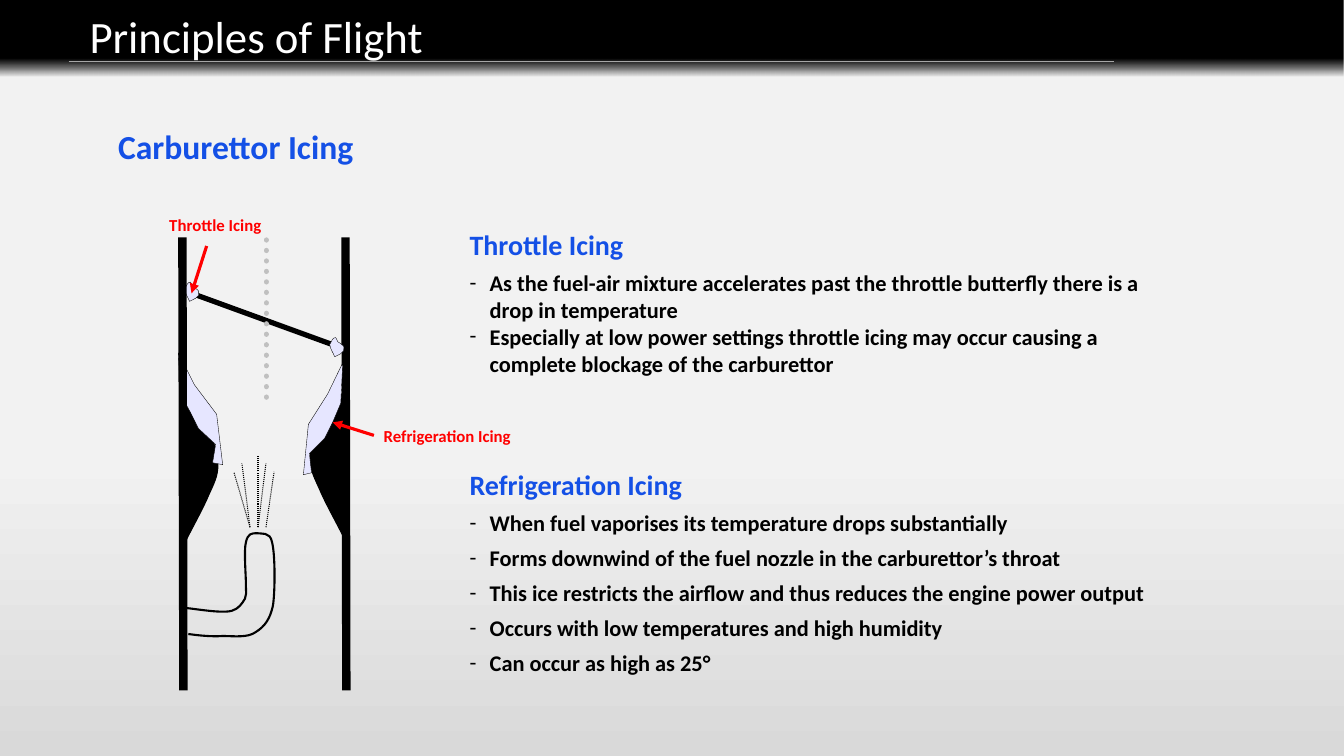
from lxml import etree
from pptx import Presentation
from pptx.dml.color import RGBColor
from pptx.enum.dml import MSO_LINE
from pptx.enum.shapes import MSO_CONNECTOR, MSO_SHAPE
from pptx.oxml.ns import qn
from pptx.util import Pt

STRAIGHT = MSO_CONNECTOR.STRAIGHT
RECTANGLE = MSO_SHAPE.RECTANGLE
DOTTED = MSO_LINE.ROUND_DOT

FONT = "Calibri"
COLORS = {
    "black": "000000", "white": "FFFFFF", "blue": "1450E6", "red": "FF0000",
    "ice": "E6E6FF", "axis": "C0C0C0", "rule": "A6A6A6",
    "page top": "F2F2F2", "page bottom": "D9D9D9",
}

# Curves: a start point, then three points (two controls, one end) per segment.
FUEL_PIPE = [
    (131, 434.2),
    (133.2, 434.2), (137.5, 434.9), (143.3, 435.6),
    (149, 436.3), (160.6, 437.8), (165.6, 436.3),
    (170.6, 434.9), (172.8, 431.3), (175, 427.7),
    (176.4, 424.8), (175.7, 424.1), (175.7, 416.9),
    (175.7, 410.4), (174.2, 393.1), (175.7, 387.4),
    (177.1, 380.9), (180, 380.9), (183.6, 380.9),
    (186.5, 381.6), (193, 379.4), (194.4, 387.4),
    (196.6, 396), (196.6, 421.2), (195.1, 432),
    (193, 442.8), (188.6, 447.8), (182.9, 451.4),
    (177.1, 455.8), (167, 454.3), (159.1, 454.3),
    (150.5, 455), (139.7, 453.6), (134.6, 452.9),
]
RIGHT_THROAT = [
    (246.2, 385.2),
    (240.5, 373.7), (234, 362.2), (229.7, 352.8),
    (226.1, 344.2), (222.5, 338.4), (221.8, 331.2),
    (221, 324.7), (222.5, 318.2), (224.6, 312.5),
    (226.8, 307.4), (229, 307.4), (233.3, 301),
    (237.6, 294.5), (245.5, 278.6), (249.1, 272.9),
]
LEFT_THROAT = [(377.3 - x, y + 4.3) for x, y in RIGHT_THROAT]
LEFT_CHIP = [
    (141.8, 211),
    (141.1, 211.7), (140.4, 212.4), (139.7, 213.1),
    (138.2, 213.8), (135.4, 215.3), (135.4, 215.3),
    (133.9, 211.7), (132.5, 210.2), (131.8, 206.6),
    (132.5, 205.9), (133.9, 200.9), (136.1, 201.6),
    (136.8, 201.6), (136.8, 203.8), (137.5, 204.5),
    (138.2, 205.2), (139, 205.2), (139.7, 205.9),
    (142.6, 208.8), (141.8, 206.6), (141.8, 211),
]
RIGHT_CHIP = [(x + 103.7, y + 39.6) for x, y in LEFT_CHIP]
LEFT_ICE = [
    (154.1, 317.5), (141.8, 306), (136.1, 294.5), (128.9, 281.5), (127.4, 252),
    (139, 275), (154.8, 295.9), (159.1, 331.9), (151.9, 330.5),
]
RIGHT_ICE = [
    (221, 324), (231.8, 313.2), (237.6, 301.7), (243.4, 288), (244.8, 259.2),
    (234, 281.5), (220.3, 303.1), (216.7, 339.1), (222.5, 337.7),
]
SPRAY = [((178.6, 376.6), (167, 337)), ((178.6, 376.6), (172.8, 331)),
         ((184.3, 376.6), (184.3, 325.4)), ((190, 376.6), (195.8, 337)),
         ((184.3, 376.6), (190, 331))]

# Heading, space above it, space above each later point, points
NOTES = [
    ("Throttle Icing", 0, 0, [
        "As the fuel-air mixture accelerates past the throttle butterfly there is a "
        "drop in temperature",
        "Especially at low power settings throttle icing may occur causing a "
        "complete blockage of the carburettor"]),
    ("Refrigeration Icing", 65, 5.8, [
        "When fuel vaporises its temperature drops substantially",
        "Forms downwind of the fuel nozzle in the carburettor’s throat",
        "This ice restricts the airflow and thus reduces the engine power output",
        "Occurs with low temperatures and high humidity",
        "Can occur as high as 25°"]),
]


def color(name):
    return RGBColor.from_string(COLORS[name])


def paint_gradient(fill, element, stops):
    """Fill from top to bottom; each stop is (position %, colour, opacity %)."""
    fill.gradient()
    fill.gradient_angle = 270
    stop_list = next(element.iter(qn("a:gsLst")))
    for old_stop in list(stop_list):
        stop_list.remove(old_stop)
    for position, name, opacity in stops:
        stop = etree.SubElement(stop_list, qn("a:gs"), pos=str(position * 1000))
        shade = etree.SubElement(stop, qn("a:srgbClr"), val=COLORS[name])
        if opacity < 100:
            etree.SubElement(shade, qn("a:alpha"), val=str(opacity * 1000))


def add_line(page, start, end, name, width, dash=None, round_cap=False, arrow=False):
    line = page.shapes.add_connector(STRAIGHT, *map(Pt, start + end))
    line.line.color.rgb = color(name)
    line.line.width = Pt(width)
    stroke = line.line._get_or_add_ln()
    if dash is not None:
        line.line.dash_style = dash
    if round_cap:
        stroke.set("cap", "rnd")
    if arrow:
        etree.SubElement(stroke, qn("a:tailEnd"), type="triangle")
    etree.SubElement(line._element.spPr, qn("a:effectLst"))


def add_outline(page, points, width, fill=None, closed=False):
    corners = [(Pt(x), Pt(y)) for x, y in points]
    builder = page.shapes.build_freeform(*corners[0])
    builder.add_line_segments(corners[1:], close=closed)
    shape = builder.convert_to_shape()
    shape.shadow.inherit = False
    if fill:
        shape.fill.solid()
        shape.fill.fore_color.rgb = color(fill)
    else:
        shape.fill.background()
    shape.line.color.rgb = color("black")
    shape.line.width = Pt(width)
    return shape


def add_curve(page, points, width, fill=None, closed=False):
    """Draw an outline whose points are taken by threes as Bezier segments."""
    shape = add_outline(page, points, width, fill, closed)
    steps = list(shape._element.iter(qn("a:lnTo")))
    for first in range(0, len(points) - 1, 3):
        bend = etree.Element(qn("a:cubicBezTo"))
        steps[first].addprevious(bend)
        for step in steps[first:first + 3]:
            bend.append(step[0])
            step.getparent().remove(step)


def add_box(page, left, top, width, height):
    box = page.shapes.add_textbox(Pt(left), Pt(top), Pt(width), Pt(height))
    box.text_frame.word_wrap = True
    return box.text_frame


def add_span(para, text, size, name, bold=True):
    span = para.add_run()
    span.text = text
    span.font.name = FONT
    span.font.size = Pt(size)
    span.font.bold = bold
    span.font.color.rgb = color(name)


def add_label(page, place, text, size, name, bold=True):
    add_span(add_box(page, *place).paragraphs[0], text, size, name, bold)


def add_dash(para):
    props = para._p.get_or_add_pPr()
    props.set("marL", str(Pt(14.4)))
    props.set("indent", str(-Pt(14.4)))
    etree.SubElement(props, qn("a:buFont"), typeface=FONT)
    etree.SubElement(props, qn("a:buChar"), char="-")


def add_notes(page):
    frame = add_box(page, 328.3, 159.1, 510.5, 332)
    para = frame.paragraphs[0]
    for heading, heading_gap, point_gap, points in NOTES:
        if heading_gap:
            para = frame.add_paragraph()
            para.space_before = Pt(heading_gap)
        add_span(para, heading, 20, "blue")
        for index, point in enumerate(points):
            para = frame.add_paragraph()
            para.space_before = Pt(point_gap if index else 5.6)
            add_dash(para)
            add_span(para, point, 16, "black")


def add_carburettor(page):
    add_curve(page, FUEL_PIPE, 1.5)
    add_line(page, (246.8, 169.6), (247.4, 493.2), "black", 6)
    for throat in (RIGHT_THROAT, LEFT_THROAT):
        add_curve(page, throat, 0.75, "black")
    add_line(page, (237.6, 246.2), (136.8, 209.5), "black", 3.75)
    add_line(page, (190.2, 283.7), (190.2, 170), "axis", 3.75, DOTTED, round_cap=True)
    for ice in (LEFT_ICE, RIGHT_ICE):
        add_outline(page, ice, 0.25, "ice", closed=True)
    for chip in (LEFT_CHIP, RIGHT_CHIP):
        add_curve(page, chip, 0.25, "ice", closed=True)
    for base, tip in SPRAY:
        add_line(page, base, tip, "black", 0.75, DOTTED)
    add_line(page, (130.3, 169.6), (131, 493.2), "black", 6)


def add_title_bar(page):
    bar = page.shapes.add_shape(RECTANGLE, 0, 0, Pt(960), Pt(54.7))
    bar.shadow.inherit = False
    bar.line.fill.background()
    paint_gradient(bar.fill, bar._element, [
        (0, "black", 100), (76, "black", 100), (88, "black", 55), (100, "black", 0)])
    add_label(page, (56.9, 2.9, 738.7, 46), "Principles of Flight", 32, "white", False)
    add_line(page, (49, 43.9), (795.6, 43.9), "rule", 1)


def main():
    deck = Presentation()
    deck.slide_width, deck.slide_height = Pt(960), Pt(540)
    page = deck.slides.add_slide(deck.slide_layouts[6])
    paint_gradient(page.background.fill, page._element, [
        (0, "page top", 100), (60, "page top", 100), (100, "page bottom", 100)])
    add_carburettor(page)
    add_notes(page)
    add_label(page, (113.8, 149.8, 113, 21.6), "Throttle Icing", 12, "red")
    add_label(page, (267, 300.6, 149, 21.6), "Refrigeration Icing", 12, "red")
    add_line(page, (267.1, 311), (237.6, 301.7), "red", 2.25, arrow=True)
    add_line(page, (147.6, 175.7), (136.8, 209.5), "red", 2.25, arrow=True)
    add_label(page, (77.3, 86.4, 514, 36), "Carburettor Icing", 24, "blue")
    add_title_bar(page)
    deck.save("out.pptx")


if __name__ == "__main__":
    main()
